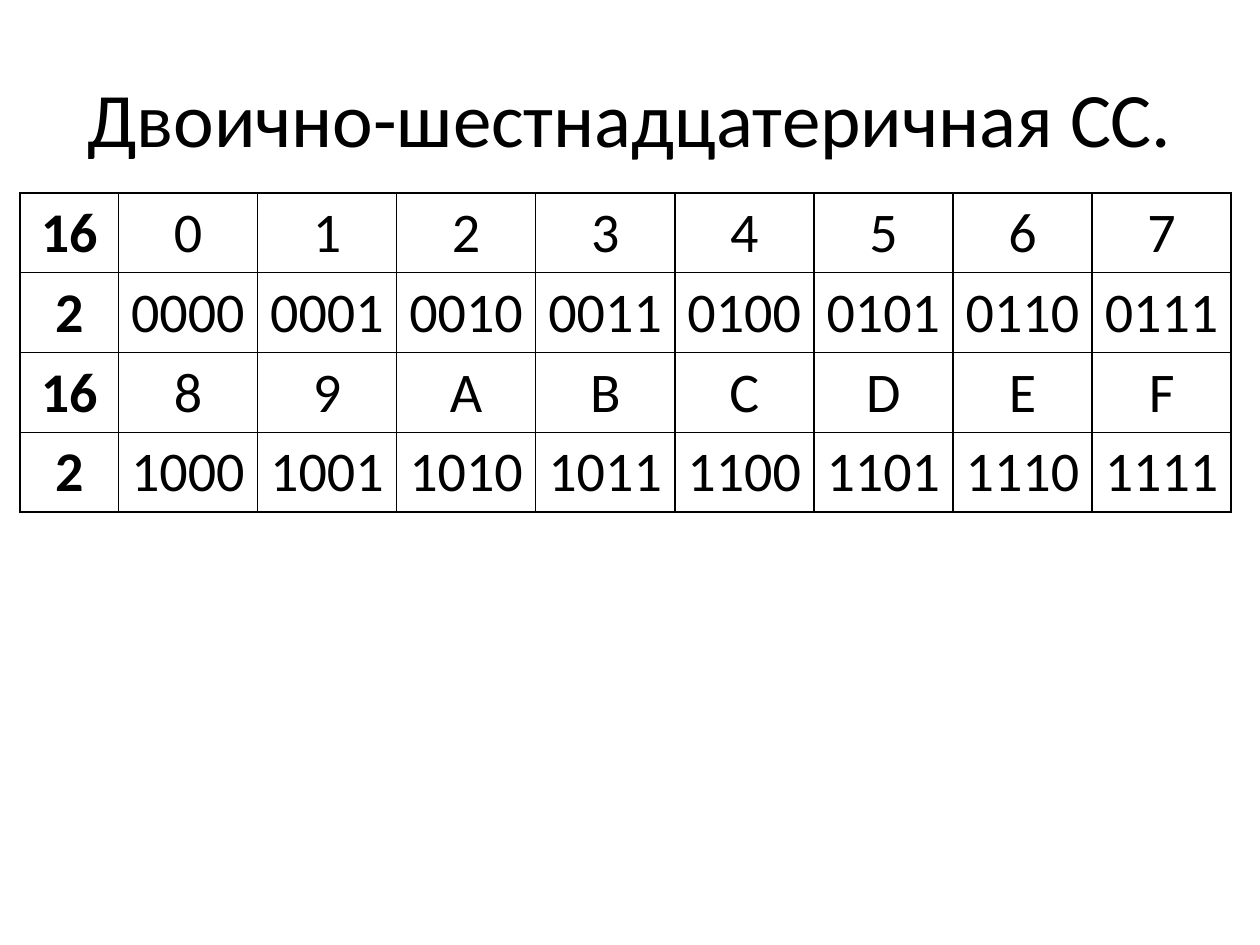
from dataclasses import dataclass

from lxml import etree
from pptx import Presentation
from pptx import util as u
from pptx.dml.color import RGBColor
from pptx.enum import text
from pptx.oxml import ns


@dataclass(frozen=True)
class Theme:
    font: str = "Calibri"
    ink: str = "000000"
    title: int = 44
    cell: int = 32
    line: int = 1


THEME = Theme()
DIGITS = "0123456789ABCDEF"
HALF = 8


def style(para, size, bold=False):
    para.alignment = text.PP_ALIGN.CENTER
    font = para.font
    font.name = THEME.font
    font.size = u.Pt(size)
    font.bold = bold
    font.color.rgb = RGBColor.from_string(THEME.ink)


def add_title(slide, words):
    box = slide.shapes.add_textbox(
        u.Inches(0.5), u.Inches(0.3), u.Inches(9), u.Inches(1.25))
    frame = box.text_frame
    frame.word_wrap = True
    frame.vertical_anchor = text.MSO_ANCHOR.MIDDLE
    frame.text = words
    style(frame.paragraphs[0], THEME.title)


def add_edges(cell):
    """Draw a solid line on all four sides of a cell."""
    props = cell._tc.get_or_add_tcPr()
    for side in "LRTB":
        line = etree.SubElement(props, ns.qn(f"a:ln{side}"),
                                w=str(u.Pt(THEME.line)))
        fill = etree.SubElement(line, ns.qn("a:solidFill"))
        etree.SubElement(fill, ns.qn("a:srgbClr"), val=THEME.ink)


def fill_cell(cell, words, bold):
    cell.text = words
    cell.vertical_anchor = text.MSO_ANCHOR.MIDDLE
    cell.margin_left = cell.margin_right = u.Inches(0.05)
    style(cell.text_frame.paragraphs[0], THEME.cell, bold)
    add_edges(cell)
    cell.fill.background()


def digit_rows():
    """Pair each half of the hex digits with its four-bit codes."""
    rows = []
    for start in range(0, len(DIGITS), HALF):
        half = DIGITS[start:start + HALF]
        rows.append(["16", *half])
        rows.append(["2", *(f"{int(digit, 16):04b}" for digit in half)])
    return rows


def add_grid(slide, rows):
    table = slide.shapes.add_table(
        len(rows), len(rows[0]), u.Inches(0.16), u.Inches(1.53),
        u.Inches(9.61), u.Inches(2.53)).table
    table.first_row = table.horz_banding = False
    for index, col in enumerate(table.columns):
        col.width = u.Inches(1.104 if index else 0.78)
    for line, row in zip(rows, table.rows):
        for index, (words, cell) in enumerate(zip(line, row.cells)):
            fill_cell(cell, words, bold=index == 0)


def main():
    deck = Presentation()
    deck.slide_width, deck.slide_height = u.Inches(10), u.Inches(7.5)
    slide = deck.slides.add_slide(deck.slide_layouts[6])
    add_title(slide, "Двоично-шестнадцатеричная СС.")
    add_grid(slide, digit_rows())
    deck.save("out.pptx")


if __name__ == "__main__":
    main()
